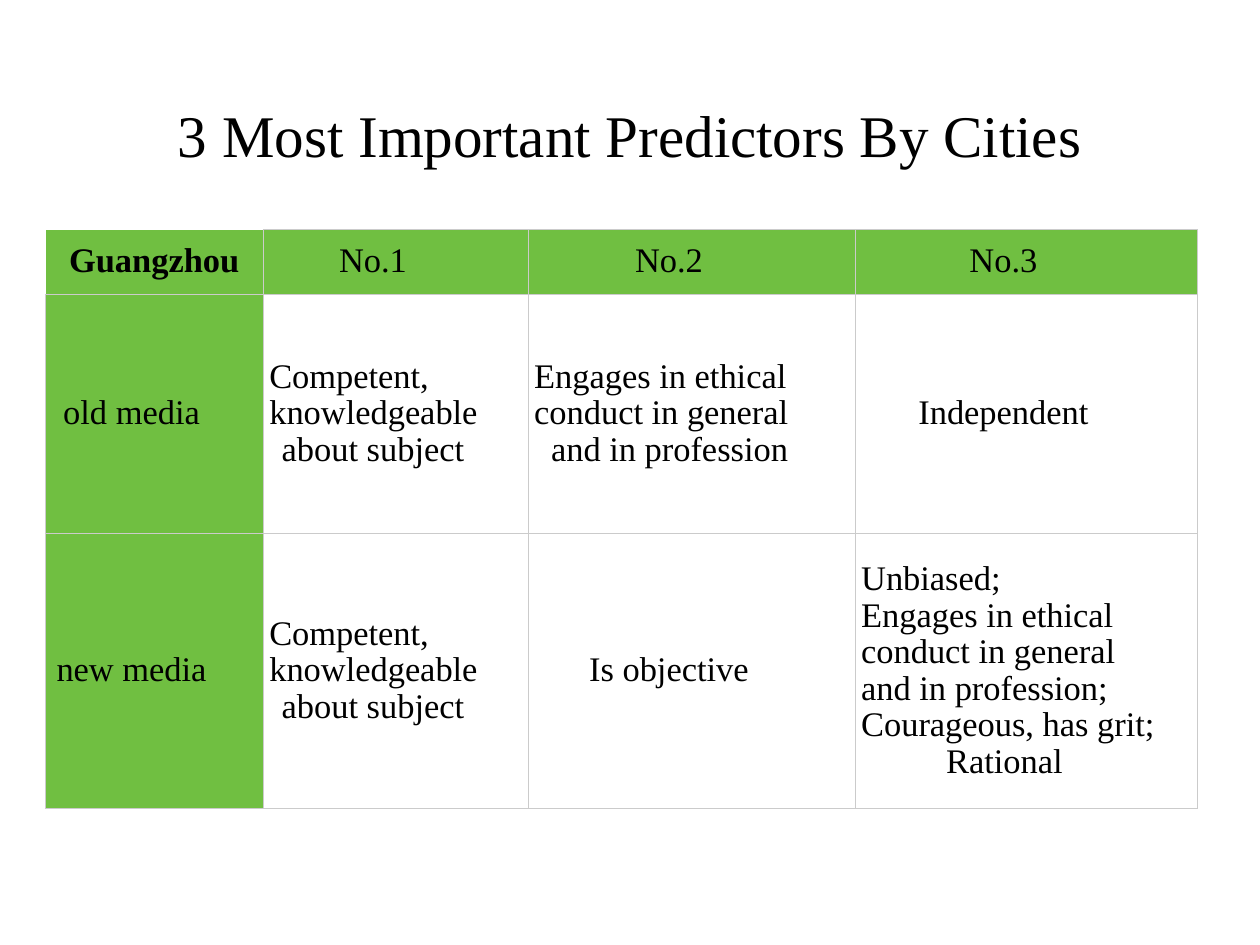
from dataclasses import dataclass

from pptx import Presentation
from pptx.dml.color import RGBColor
from pptx.enum.text import MSO_ANCHOR, PP_ALIGN
from pptx.oxml import parse_xml
from pptx.oxml.ns import nsdecls
from pptx.table import _Cell as Cell
from pptx.text.text import _Paragraph as Paragraph
from pptx.util import Inches, Pt

FONT = "Times New Roman"
COLORS = {"text": "000000", "green": "70BF41", "white": "FFFFFF", "border": "CBCBCB"}
COL_WIDTHS = (2.46, 2.99, 3.69, 3.86)
ROW_HEIGHTS = (0.73, 2.7, 3.11)
PAD = 0.07
RIGHT_PAD = 0.58


@dataclass
class Entry:
    lines: tuple[str, ...]
    last_indent: float = 0
    bold: bool = False


COMPETENT = Entry(("Competent,", "knowledgeable", "about subject"), 0.14)
ETHICAL = Entry(("Engages in ethical", "conduct in general", "and in profession"), 0.19)
MIXED = Entry(
    ("Unbiased;", "Engages in ethical", "conduct in general", "and in profession;",
     "Courageous, has grit;", "Rational"),
    0.96,
)
ROWS = (
    (Entry(("Guangzhou",), bold=True), Entry(("No.1",)), Entry(("No.2",)), Entry(("No.3",))),
    (Entry(("old media",)), COMPETENT, ETHICAL, Entry(("Independent",))),
    (Entry(("new media",)), COMPETENT, Entry(("Is objective",)), MIXED),
)


def rgb(name: str) -> RGBColor:
    return RGBColor.from_string(COLORS[name])


def style(p: Paragraph, size: float, align: PP_ALIGN, bold: bool = False) -> None:
    p.alignment = align
    p.font.name = FONT
    p.font.size = Pt(size)
    p.font.bold = bold
    p.font.color.rgb = rgb("text")


def add_borders(cell: Cell, sides: str) -> None:
    tc_pr = cell._tc.get_or_add_tcPr()
    for i, side in enumerate(sides):
        tc_pr.insert(i, parse_xml(
            f'<a:ln{side} {nsdecls("a")} w="{Pt(0.5)}"><a:solidFill>'
            f'<a:srgbClr val="{COLORS["border"]}"/></a:solidFill></a:ln{side}>'
        ))


def fill_cell(cell: Cell, entry: Entry, color: str, sides: str) -> None:
    several = len(entry.lines) > 1
    cell.vertical_anchor = MSO_ANCHOR.MIDDLE
    cell.margin_left = Inches(PAD)
    cell.margin_right = Inches(PAD if several or entry.bold else RIGHT_PAD)
    cell.margin_top = cell.margin_bottom = Inches(0)
    cell.fill.solid()
    cell.fill.fore_color.rgb = rgb(color)
    add_borders(cell, sides)
    tf = cell.text_frame
    tf.text = "\n".join(entry.lines)
    for p in tf.paragraphs:
        style(p, 28, PP_ALIGN.LEFT if several else PP_ALIGN.CENTER, entry.bold)
        p.line_spacing = 0.96
    if several:
        p_pr = tf.paragraphs[-1]._p.get_or_add_pPr()
        p_pr.set("marL", str(Inches(entry.last_indent)))
        p_pr.set("indent", "0")


def main() -> None:
    prs = Presentation()
    prs.slide_width, prs.slide_height = Inches(14.22), Inches(10.67)
    s = prs.slides.add_slide(prs.slide_layouts[5])

    title = s.shapes.title
    title.left, title.top = Inches(1.04), Inches(0.25)
    title.width, title.height = Inches(12.14), Inches(2.36)
    tf = title.text_frame
    tf.text = "3 Most Important Predictors By Cities"
    tf.vertical_anchor = MSO_ANCHOR.MIDDLE
    tf.margin_left = tf.margin_right = tf.margin_top = tf.margin_bottom = Inches(0)
    style(tf.paragraphs[0], 48, PP_ALIGN.CENTER)
    tf.paragraphs[0].line_spacing = 1.2

    table = s.shapes.add_table(
        len(ROWS), len(COL_WIDTHS), Inches(0.51), Inches(2.59),
        Inches(sum(COL_WIDTHS)), Inches(sum(ROW_HEIGHTS)),
    ).table
    for column, width in zip(table.columns, COL_WIDTHS):
        column.width = Inches(width)
    for row, height in zip(table.rows, ROW_HEIGHTS):
        row.height = Inches(height)
    for i, entries in enumerate(ROWS):
        for j, entry in enumerate(entries):
            color = "white" if i and j else "green"
            fill_cell(table.cell(i, j), entry, color, "LRTB" if i or j else "RB")

    prs.save("out.pptx")


if __name__ == "__main__":
    main()
